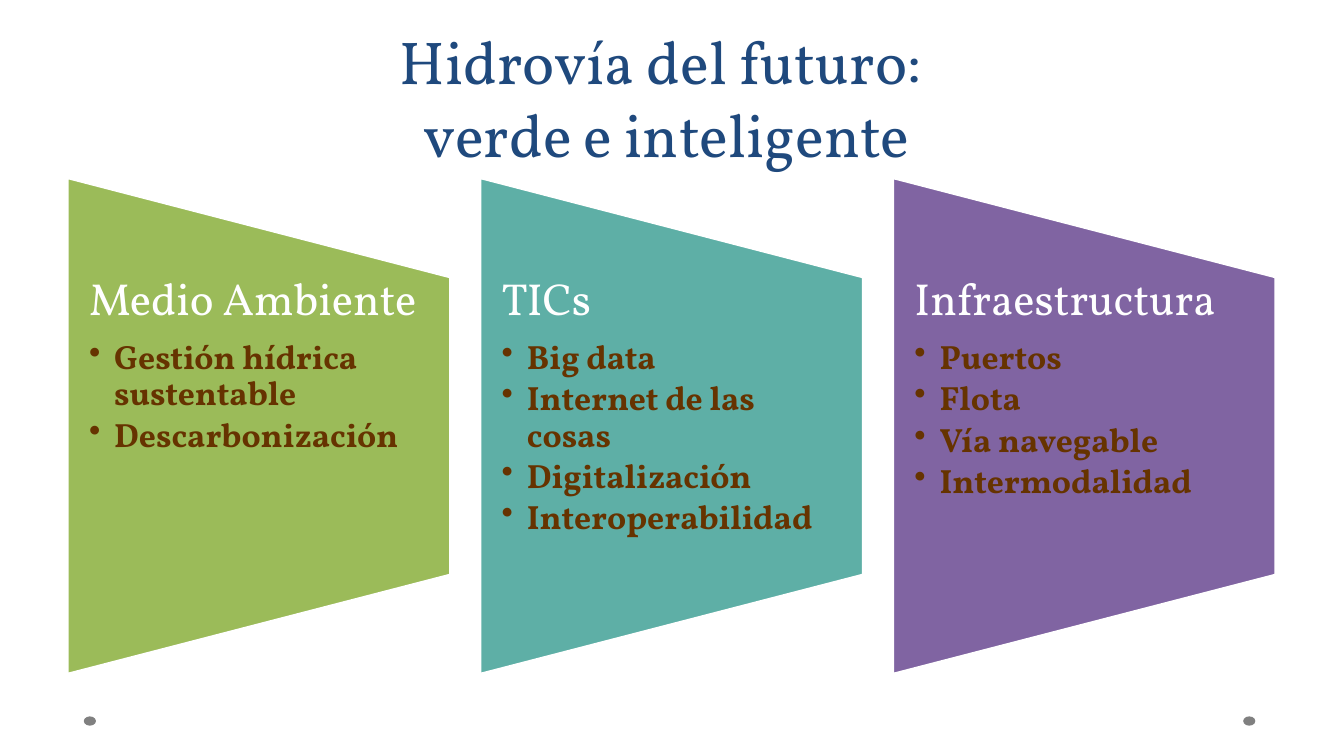
from lxml import etree
from pptx import Presentation
from pptx.dml.color import RGBColor
from pptx.enum.shapes import MSO_SHAPE
from pptx.enum.text import MSO_ANCHOR, MSO_AUTO_SIZE, PP_ALIGN
from pptx.oxml.ns import qn
from pptx.util import Pt

TRAPEZOID = MSO_SHAPE.FLOWCHART_MANUAL_OPERATION
OVAL = MSO_SHAPE.OVAL
CENTER, LEFT = PP_ALIGN.CENTER, PP_ALIGN.LEFT
TOP, BOTTOM = MSO_ANCHOR.TOP, MSO_ANCHOR.BOTTOM
NO_AUTOFIT = MSO_AUTO_SIZE.NONE

FONT = "Vollkorn"
NAVY = RGBColor(0x1F, 0x49, 0x7D)
WHITE = RGBColor(0xFF, 0xFF, 0xFF)
BROWN = RGBColor(0x66, 0x33, 0x00)
GRAY = RGBColor(0x80, 0x80, 0x80)
GREEN = RGBColor(0x9B, 0xBB, 0x59)
TEAL = RGBColor(0x5E, 0xAF, 0xA6)
PURPLE = RGBColor(0x80, 0x64, 0xA2)

SLIDE_WIDTH, SLIDE_HEIGHT = 720, 405
PANEL_TOP, PANEL_WIDTH, PANEL_HEIGHT = 94.7, 206, 267
PANEL_LEFT, PANEL_PITCH = 35.7, 221.1
BULLET_INDENT = 13.5

PANELS = [
    ("Medio Ambiente", GREEN,
     ["Gestión hídrica sustentable", "Descarbonización"]),
    ("TICs", TEAL,
     ["Big data", "Internet de las cosas", "Digitalización", "Interoperabilidad"]),
    ("Infraestructura", PURPLE,
     ["Puertos", "Flota", "Vía navegable", "Intermodalidad"]),
]


def write_text(paragraph, text, size, color, bold=False, align=LEFT,
               line_spacing=1.0, space_after=0):
    paragraph.text = text
    paragraph.alignment = align
    paragraph.line_spacing = line_spacing
    paragraph.space_before = Pt(0)
    paragraph.space_after = Pt(space_after)
    for run in paragraph.runs:
        run.font.name = FONT
        run.font.size = Pt(size)
        run.font.bold = bold
        run.font.color.rgb = color


def add_bullet(paragraph):
    properties = paragraph._p.get_or_add_pPr()
    properties.set("marL", str(Pt(BULLET_INDENT)))
    properties.set("indent", str(-Pt(BULLET_INDENT)))
    etree.SubElement(properties, qn("a:buChar")).set("char", "•")


def add_filled_shape(slide, kind, left, top, width, height, color):
    shape = slide.shapes.add_shape(kind, Pt(left), Pt(top), Pt(width), Pt(height))
    shape.shadow.inherit = False
    shape.fill.solid()
    shape.fill.fore_color.rgb = color
    shape.line.fill.background()
    return shape


def place_title(slide, left, top, width, height):
    title = slide.shapes.title
    title.left, title.top = Pt(left), Pt(top)
    title.width, title.height = Pt(width), Pt(height)
    frame = title.text_frame
    frame.auto_size = NO_AUTOFIT
    frame.vertical_anchor = BOTTOM
    write_text(frame.paragraphs[0], "Hidrovía del futuro: \vverde e inteligente",
               32.4, NAVY, align=CENTER)


def add_panel(slide, left, top, width, height, heading, color, items):
    # The trapezoid lies on its side, so its own width is the panel's height.
    offset = (height - width) / 2
    trapezoid = add_filled_shape(slide, TRAPEZOID, left - offset, top + offset,
                                 height, width, color)
    trapezoid.rotation = 270
    trapezoid.line.color.rgb = WHITE
    trapezoid.line.width = Pt(2.25)

    text_box = slide.shapes.add_textbox(Pt(left), Pt(top + height / 5),
                                        Pt(width), Pt(height * 3 / 5))
    frame = text_box.text_frame
    frame.word_wrap = True
    frame.vertical_anchor = TOP
    frame.margin_left = frame.margin_right = Pt(12)
    frame.margin_top = frame.margin_bottom = Pt(0)
    write_text(frame.paragraphs[0], heading, 24, WHITE,
               line_spacing=0.9, space_after=8.4)
    for item in items:
        paragraph = frame.add_paragraph()
        paragraph.level = 1
        write_text(paragraph, item, 18, BROWN, bold=True,
                   line_spacing=0.9, space_after=2.7)
        add_bullet(paragraph)


def add_footer_dots(slide, top, lefts):
    for left in lefts:
        add_filled_shape(slide, OVAL, left, top, 6.5, 5, GRAY)


def main():
    presentation = Presentation()
    presentation.slide_width = Pt(SLIDE_WIDTH)
    presentation.slide_height = Pt(SLIDE_HEIGHT)
    slide = presentation.slides.add_slide(presentation.slide_layouts[5])

    add_footer_dots(slide, 383.8, (44.9, 666))
    place_title(slide, 36.7, 15, 641, 79.4)
    for index, (heading, color, items) in enumerate(PANELS):
        add_panel(slide, PANEL_LEFT + index * PANEL_PITCH, PANEL_TOP,
                  PANEL_WIDTH, PANEL_HEIGHT, heading, color, items)
    presentation.save("out.pptx")


if __name__ == "__main__":
    main()
